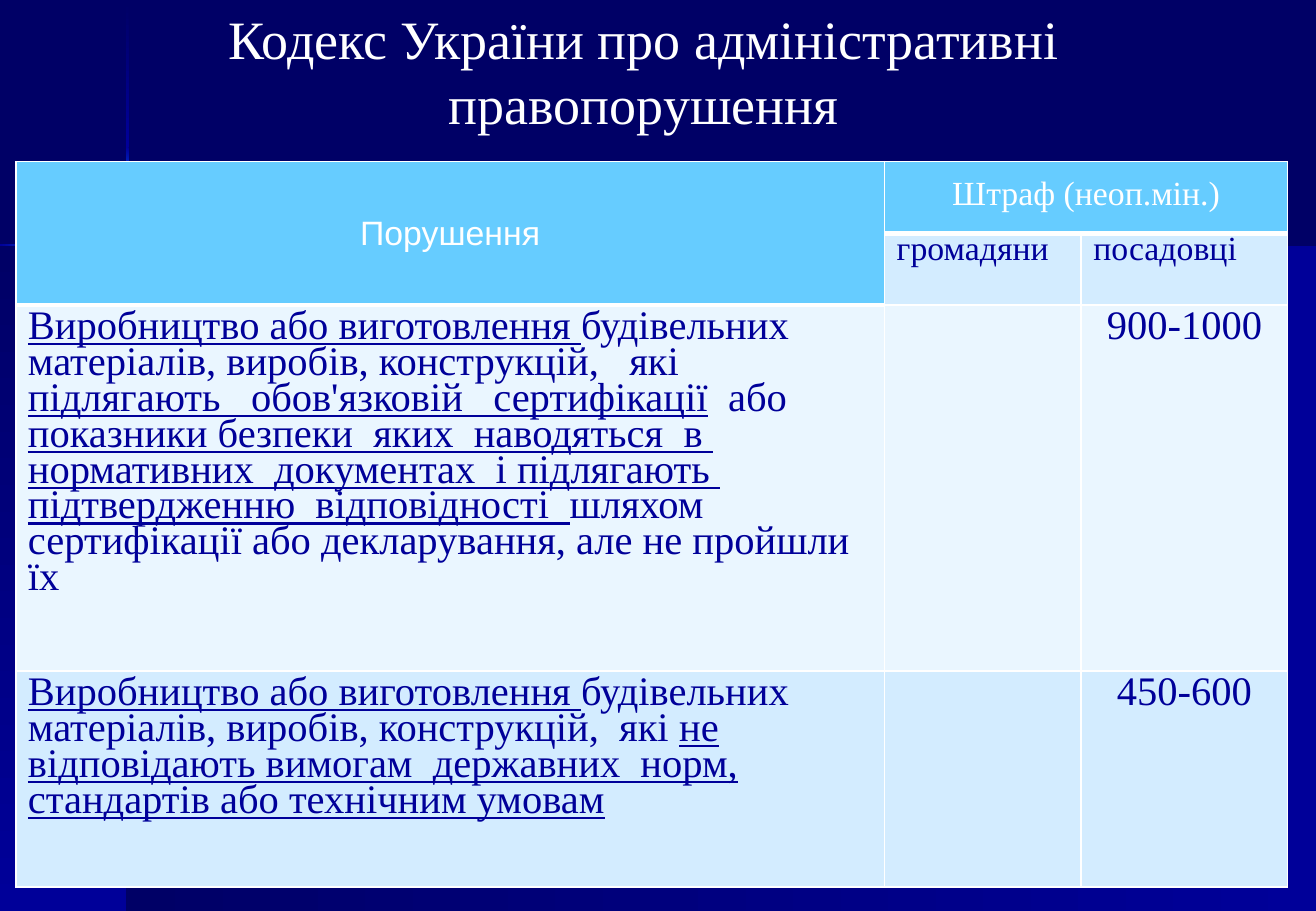
"""Build a slide on fines for administrative offences with building materials."""
from copy import deepcopy
from dataclasses import dataclass
from itertools import pairwise

from lxml import etree
from pptx import Presentation
from pptx.dml.color import RGBColor
from pptx.enum.shapes import MSO_SHAPE
from pptx.enum.text import MSO_ANCHOR, PP_ALIGN
from pptx.oxml.ns import qn
from pptx.slide import Slide
from pptx.table import Table
from pptx.util import Cm, Pt

RECTANGLE = MSO_SHAPE.RECTANGLE
LEFT, CENTER = PP_ALIGN.LEFT, PP_ALIGN.CENTER
TOP, MIDDLE = MSO_ANCHOR.TOP, MSO_ANCHOR.MIDDLE

DARK = RGBColor(0x00, 0x00, 0x66)
NAVY = RGBColor(0x00, 0x00, 0x99)
BRIGHT = RGBColor(0x00, 0x66, 0xFF)
CREAM = RGBColor(0xFF, 0xFF, 0xCC)
WHITE = RGBColor(0xFF, 0xFF, 0xFF)
SKY = RGBColor(0x66, 0xCC, 0xFF)
PALE = RGBColor(0xD3, 0xEC, 0xFF)
PALEST = RGBColor(0xEA, 0xF6, 0xFF)

SERIF, SANS = "Times New Roman", "Arial"
WIDTH, HEIGHT = 27.51, 19.05
LINE_THICKNESS = 0.05
VERTICAL_EDGES = (0.03, 3.07, 4.19, 6.05, 7.16, HEIGHT)
HORIZONTAL_EDGES = (0, 1.66, 3.66, 4.88, WIDTH)
GLOW = ((DARK, NAVY), (NAVY, BRIGHT), (BRIGHT, CREAM, BRIGHT), (BRIGHT, NAVY), (NAVY, DARK))

COLUMN_WIDTHS = (18.16, 4.11, 4.32)
ROW_HEIGHTS = (1.5, 1.5, 7.65, 4.52)
ROW_FILLS = (SKY, PALE, PALEST, PALE)
THICK_BOTTOM = {(0, 0), (1, 0), (0, 1), (0, 2)}
THICK_TOP = {(2, 0), (1, 1), (1, 2)}


@dataclass(frozen=True)
class Band:
    left: float
    top: float
    width: float
    height: float
    colors: tuple[RGBColor, ...]
    downward: bool


@dataclass(frozen=True)
class CellText:
    row: int
    column: int
    pieces: tuple[tuple[str, bool], ...]
    size: int = 20
    color: RGBColor = NAVY
    font: str = SERIF
    alignment: PP_ALIGN = LEFT
    anchor: MSO_ANCHOR = TOP
    spacing: float = 0.8


CELL_TEXTS = (
    CellText(0, 0, (("Порушення", False),), color=WHITE, font=SANS,
             alignment=CENTER, anchor=MIDDLE, spacing=1.0),
    CellText(0, 1, (("Штраф (неоп.мін.)", False),), color=WHITE,
             alignment=CENTER, anchor=MIDDLE, spacing=0.7),
    CellText(1, 1, (("громадяни", False),), spacing=0.7),
    CellText(1, 2, (("посадовці", False),), spacing=0.7),
    CellText(2, 0, (
        ("Виробництво або виготовлення ", True),
        ("будівельних матеріалів, виробів, конструкцій,   які   ", False),
        ("підлягають   обов'язковій   сертифікації", True),
        ("  або ", False),
        ("показники безпеки  яких  наводяться  в  нормативних  документах  "
         "і підлягають  підтвердженню  відповідності  ", True),
        ("шляхом  сертифікації або декларування, але не пройшли їх", False),
    ), size=24),
    CellText(2, 2, (("900-1000", False),), size=24, alignment=CENTER),
    CellText(3, 0, (
        ("Виробництво або виготовлення ", True),
        ("будівельних матеріалів, виробів, конструкцій,  які ", False),
        ("не відповідають вимогам  державних  норм, стандартів або технічним умовам", True),
    ), size=24),
    CellText(3, 2, (("450-600", False),), size=24, alignment=CENTER),
)


def background_bands() -> list[Band]:
    """List the two gradient panels and the glowing lines between them."""
    bands = [
        Band(2.67, 5.13, WIDTH - 2.67, HEIGHT - 5.13, (DARK, NAVY), False),
        Band(0, 5.13, 2.67, HEIGHT - 5.13, (DARK, NAVY), True),
    ]
    for (start, end), colors in zip(pairwise(VERTICAL_EDGES), GLOW):
        bands.append(Band(2.64, start, LINE_THICKNESS, end - start, colors, True))
    for (start, end), colors in zip(pairwise(HORIZONTAL_EDGES), GLOW[1:]):
        bands.append(Band(start, 5.1, end - start, LINE_THICKNESS, colors, False))
    return bands


def draw_band(slide: Slide, band: Band) -> None:
    """Draw one rectangle with an evenly spaced gradient."""
    shape = slide.shapes.add_shape(
        RECTANGLE, Cm(band.left), Cm(band.top), Cm(band.width), Cm(band.height))
    shape.shadow.inherit = False
    shape.line.fill.background()
    shape.fill.gradient()
    shape.fill.gradient_angle = 270 if band.downward else 0
    if len(band.colors) == 3:
        first_stop = shape._element.spPr.xpath(".//a:gs")[0]
        middle_stop = deepcopy(first_stop)
        middle_stop.set("pos", "50000")
        first_stop.addnext(middle_stop)
    for stop, color in zip(shape.fill.gradient_stops, band.colors):
        stop.color.rgb = color


def draw_title(slide: Slide) -> None:
    """Draw the centred title."""
    box = slide.shapes.add_textbox(Cm(0.66), Cm(0), Cm(25.6), Cm(3))
    box.text_frame.word_wrap = True
    box.text_frame.text = "Кодекс України про адміністративні правопорушення"
    paragraph = box.text_frame.paragraphs[0]
    paragraph.alignment = CENTER
    font = paragraph.runs[0].font
    font.name, font.size, font.color.rgb = SERIF, Pt(32), WHITE


def style_cell(table: Table, row: int, column: int) -> None:
    """Give a cell its white borders and its row colour."""
    cell = table.cell(row, column)
    properties = cell._tc.get_or_add_tcPr()
    thick = {"B": (row, column) in THICK_BOTTOM, "T": (row, column) in THICK_TOP}
    for side in "LRTB":
        width = Pt(3 if thick.get(side) else 1)
        line = etree.SubElement(properties, qn(f"a:ln{side}"), w=str(width))
        fill = etree.SubElement(line, qn("a:solidFill"))
        etree.SubElement(fill, qn("a:srgbClr"), val=str(WHITE))
    cell.fill.solid()
    cell.fill.fore_color.rgb = SKY if (row, column) == (1, 0) else ROW_FILLS[row]


def write_cell(table: Table, text: CellText) -> None:
    """Write the plain and underlined pieces of a cell."""
    cell = table.cell(text.row, text.column)
    cell.vertical_anchor = text.anchor
    paragraph = cell.text_frame.paragraphs[0]
    paragraph.alignment = text.alignment
    paragraph.line_spacing = text.spacing
    for words, underlined in text.pieces:
        run = paragraph.add_run()
        run.text = words
        run.font.name, run.font.size = text.font, Pt(text.size)
        run.font.color.rgb = text.color
        run.font.bold = False
        run.font.underline = underlined


def draw_table(slide: Slide) -> None:
    """Draw the table of offences and fines."""
    table = slide.shapes.add_table(
        len(ROW_HEIGHTS), len(COLUMN_WIDTHS), Cm(0.33), Cm(3.38),
        Cm(sum(COLUMN_WIDTHS)), Cm(sum(ROW_HEIGHTS))).table
    table.first_row = table.horz_banding = False
    for column, width in enumerate(COLUMN_WIDTHS):
        table.columns[column].width = Cm(width)
    for row, height in enumerate(ROW_HEIGHTS):
        table.rows[row].height = Cm(height)
        for column in range(len(COLUMN_WIDTHS)):
            style_cell(table, row, column)
    table.cell(0, 0).merge(table.cell(1, 0))
    table.cell(0, 1).merge(table.cell(0, 2))
    for text in CELL_TEXTS:
        write_cell(table, text)


def main() -> None:
    """Build and save the presentation."""
    presentation = Presentation()
    presentation.slide_width, presentation.slide_height = Cm(WIDTH), Cm(HEIGHT)
    slide = presentation.slides.add_slide(presentation.slide_layouts[6])
    slide.background.fill.solid()
    slide.background.fill.fore_color.rgb = DARK
    for band in background_bands():
        draw_band(slide, band)
    draw_title(slide)
    draw_table(slide)
    presentation.save("out.pptx")


if __name__ == "__main__":
    main()
